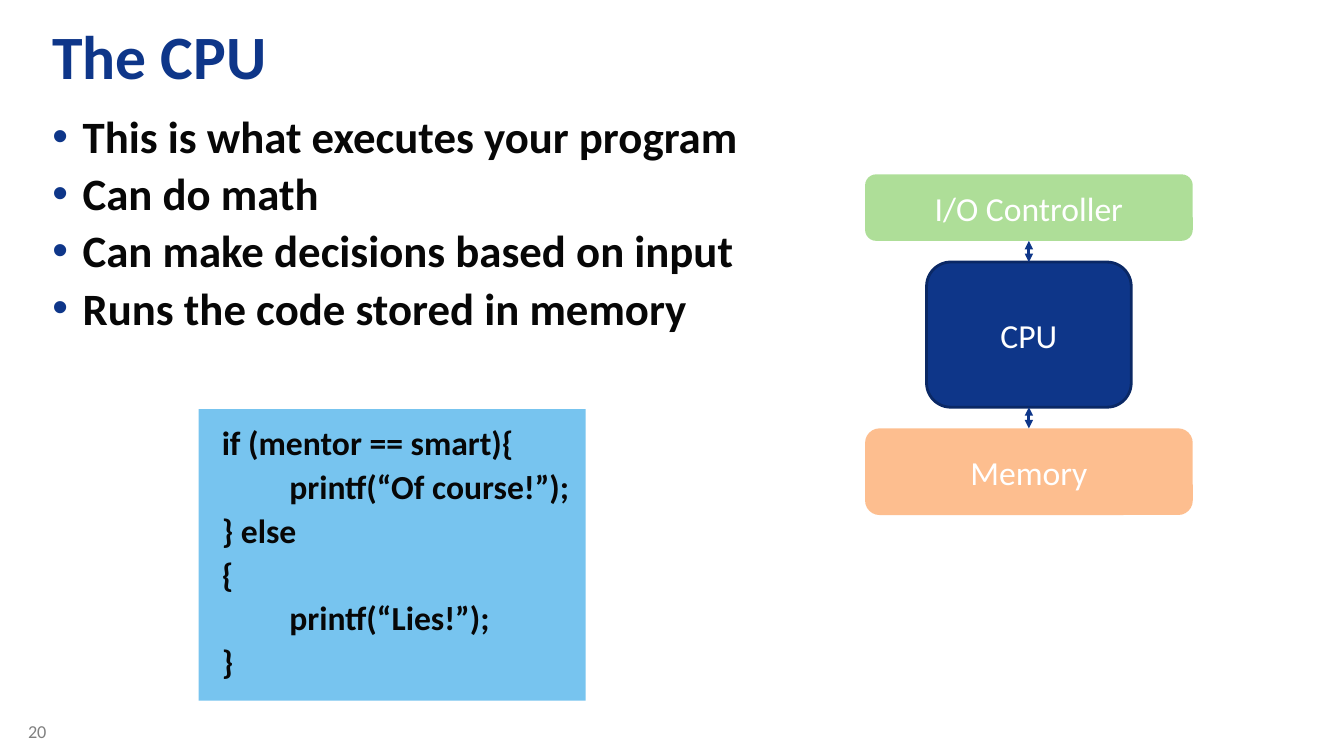
"""Build the slide that explains what the CPU does."""
from dataclasses import dataclass

from lxml import etree
from pptx import Presentation
from pptx.dml.color import RGBColor
from pptx.enum.shapes import MSO_CONNECTOR, MSO_SHAPE
from pptx.enum.text import MSO_ANCHOR, PP_ALIGN
from pptx.oxml.ns import qn
from pptx.util import Emu, Pt

EMU_PER_PX = 9144
RECTANGLE, ROUNDED = MSO_SHAPE.RECTANGLE, MSO_SHAPE.ROUNDED_RECTANGLE
STRAIGHT = MSO_CONNECTOR.STRAIGHT
LEFT, CENTER = PP_ALIGN.LEFT, PP_ALIGN.CENTER
TOP, MIDDLE = MSO_ANCHOR.TOP, MSO_ANCHOR.MIDDLE
TOP_SITE, BOTTOM_SITE = 0, 2


@dataclass(frozen=True)
class Theme:
    """Colours, font and type sizes of the slide."""
    font: str = "Calibri"
    navy: str = "0E3689"
    navy_edge: str = "0A2865"
    ink: str = "070707"
    grey: str = "808080"
    white: str = "FFFFFF"
    sky: str = "77C4EF"
    orange: str = "FD7F20"
    green: str = "5EBF33"
    title: int = 44
    body: int = 32
    label: int = 24
    number: int = 13
    line: int = 2
    gap: float = 2.4


@dataclass(frozen=True)
class Area:
    """A rectangle in px."""
    left: int
    top: int
    width: int
    height: int

    def emu(self) -> tuple[Emu, ...]:
        """Return left, top, width and height in EMU."""
        return tuple(px(n) for n in (self.left, self.top, self.width, self.height))


@dataclass(frozen=True)
class Block:
    """One filled shape with an optional label."""
    area: Area
    fill: str
    label: str = ""
    kind: int = ROUNDED
    opacity: int = 100
    edge: str = ""


THEME = Theme()
BULLETS = ("This is what executes your program", "Can do math",
           "Can make decisions based on input", "Runs the code stored in memory")
CODE = ("if (mentor == smart){", "\tprintf(“Of course!”);", "} else", "{",
        "\tprintf(“Lies!”);", "}")
CODE_PANEL = Block(Area(197, 406, 384, 289), THEME.sky, kind=RECTANGLE)
HARDWARE = (
    Block(Area(858, 173, 325, 66), THEME.green, "I/O Controller", opacity=50),
    Block(Area(919, 260, 203, 144), THEME.navy, "CPU", edge=THEME.navy_edge),
    Block(Area(858, 425, 325, 86), THEME.orange, "Memory", opacity=50),
)


def px(count: int) -> Emu:
    """Convert px to EMU."""
    return Emu(count * EMU_PER_PX)


def rgb(code: str) -> RGBColor:
    """Return the colour for a hex code."""
    return RGBColor.from_string(code)


def add_bullet(para, color: str, indent: int) -> None:
    """Give a paragraph a coloured bullet and a hanging indent."""
    props = para._p.get_or_add_pPr()
    props.set("marL", str(px(indent)))
    props.set("indent", str(px(-indent)))
    paint = etree.SubElement(props, qn("a:buClr"))
    etree.SubElement(paint, qn("a:srgbClr"), val=color)
    etree.SubElement(props, qn("a:buFont"), typeface="Arial")
    etree.SubElement(props, qn("a:buChar"), char="•")


def add_tab(para, stop: int) -> None:
    """Give a paragraph one left tab stop."""
    stops = etree.SubElement(para._p.get_or_add_pPr(), qn("a:tabLst"))
    etree.SubElement(stops, qn("a:tab"), pos=str(px(stop)), algn="l")


def write(frame, lines: tuple[str, ...], *, size: int, color: str, bold: bool = False,
          align: int = LEFT, anchor: int = TOP, margins: tuple[int, int] = (10, 5),
          bullet: str = "", tab: int = 0) -> None:
    """Fill a text frame with one formatted paragraph per line."""
    frame.word_wrap = True
    frame.vertical_anchor = anchor
    frame.margin_left = frame.margin_right = px(margins[0])
    frame.margin_top = frame.margin_bottom = px(margins[1])
    for index, line in enumerate(lines):
        para = frame.add_paragraph() if index else frame.paragraphs[0]
        if bullet:
            add_bullet(para, bullet, 30)
        if tab:
            add_tab(para, tab)
        para.alignment = align
        if index:
            para.space_before = Pt(THEME.gap)
        span = para.add_run()
        span.text = line
        span.font.name = THEME.font
        span.font.size = Pt(size)
        span.font.bold = bold
        span.font.color.rgb = rgb(color)


def add_text(page, area: Area, lines: tuple[str, ...], **style) -> None:
    """Add a text box."""
    box = page.shapes.add_textbox(*area.emu())
    write(box.text_frame, lines, **style)


def add_block(page, block: Block):
    """Draw a block and return its shape."""
    shape = page.shapes.add_shape(block.kind, *block.area.emu())
    shape.shadow.inherit = False
    shape.fill.solid()
    shape.fill.fore_color.rgb = rgb(block.fill)
    if block.opacity < 100:
        paint = shape._element.spPr.find(qn("a:solidFill"))[0]
        etree.SubElement(paint, qn("a:alpha"), val=str(block.opacity * 1000))
    if block.edge:
        shape.line.color.rgb = rgb(block.edge)
        shape.line.width = Pt(THEME.line)
    else:
        shape.line.fill.background()
    if block.label:
        write(shape.text_frame, (block.label,), size=THEME.label, color=THEME.white,
              align=CENTER, anchor=MIDDLE)
    return shape


def add_link(page, upper, lower) -> None:
    """Join two stacked shapes with a double-headed arrow."""
    link = page.shapes.add_connector(STRAIGHT, 0, 0, 0, 0)
    link.begin_connect(upper, BOTTOM_SITE)
    link.end_connect(lower, TOP_SITE)
    link.line.color.rgb = rgb(THEME.navy)
    link.line.width = Pt(THEME.line)
    outline = link.line._get_or_add_ln()
    for end in ("a:headEnd", "a:tailEnd"):
        etree.SubElement(outline, qn(end), type="triangle")
    etree.SubElement(link._element.spPr, qn("a:effectLst"))


def main() -> None:
    """Build and save the deck."""
    deck = Presentation()
    deck.slide_width, deck.slide_height = px(1333), px(750)
    page = deck.slides.add_slide(deck.slide_layouts[6])
    add_text(page, Area(18, 710, 59, 40), ("20",), size=THEME.number, color=THEME.grey)
    add_text(page, Area(39, 11, 1247, 85), ("The CPU",), size=THEME.title,
             color=THEME.navy, bold=True, margins=(13, 7))
    add_text(page, Area(39, 101, 1247, 589), BULLETS, size=THEME.body, color=THEME.ink,
             bold=True, margins=(13, 7), bullet=THEME.navy)
    add_block(page, CODE_PANEL)
    add_text(page, Area(207, 412, 384, 289), CODE, size=THEME.label, color=THEME.ink,
             bold=True, margins=(13, 7), tab=67)
    shapes = [add_block(page, block) for block in HARDWARE]
    for upper, lower in zip(shapes, shapes[1:]):
        add_link(page, upper, lower)
    deck.save("out.pptx")


if __name__ == "__main__":
    main()
